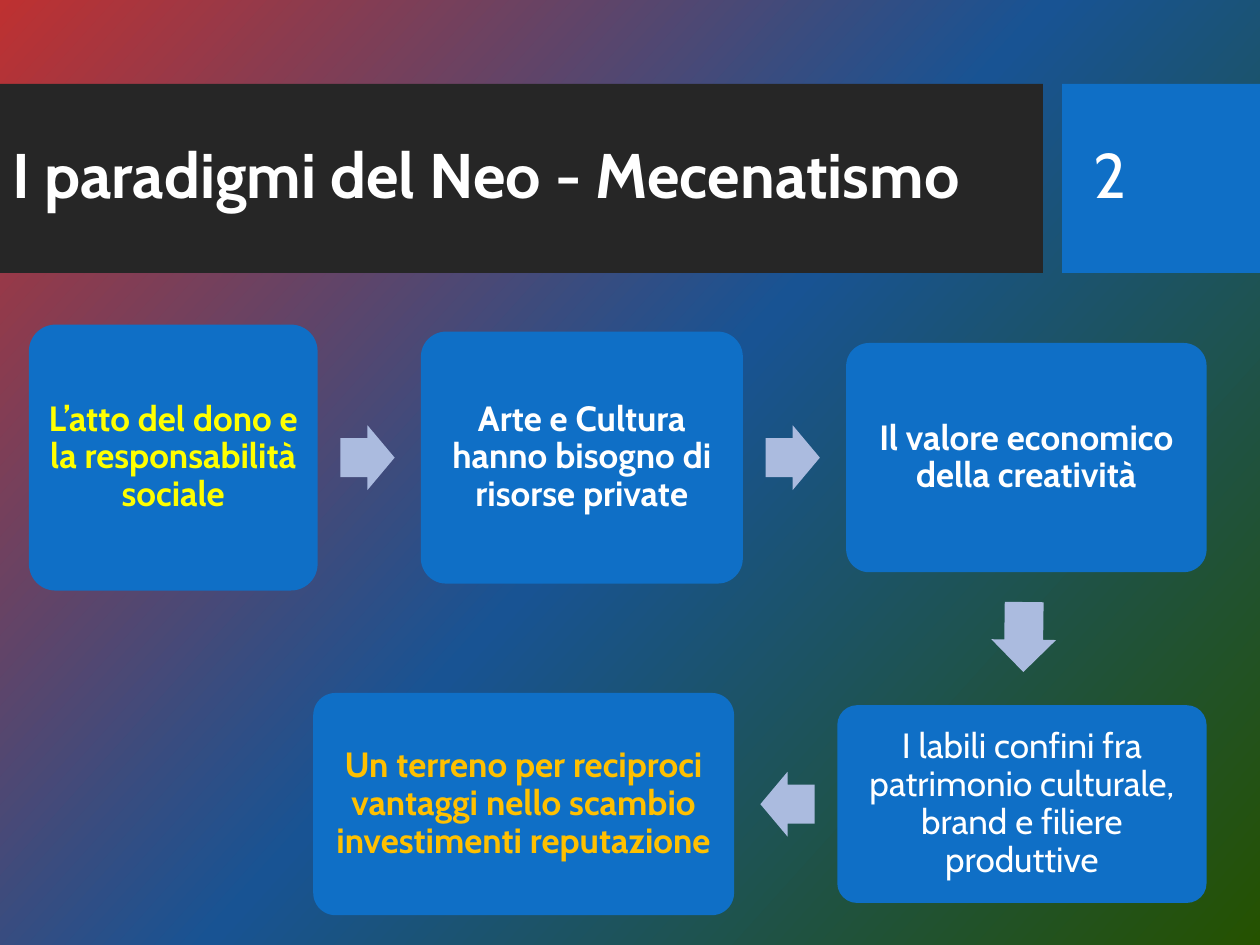
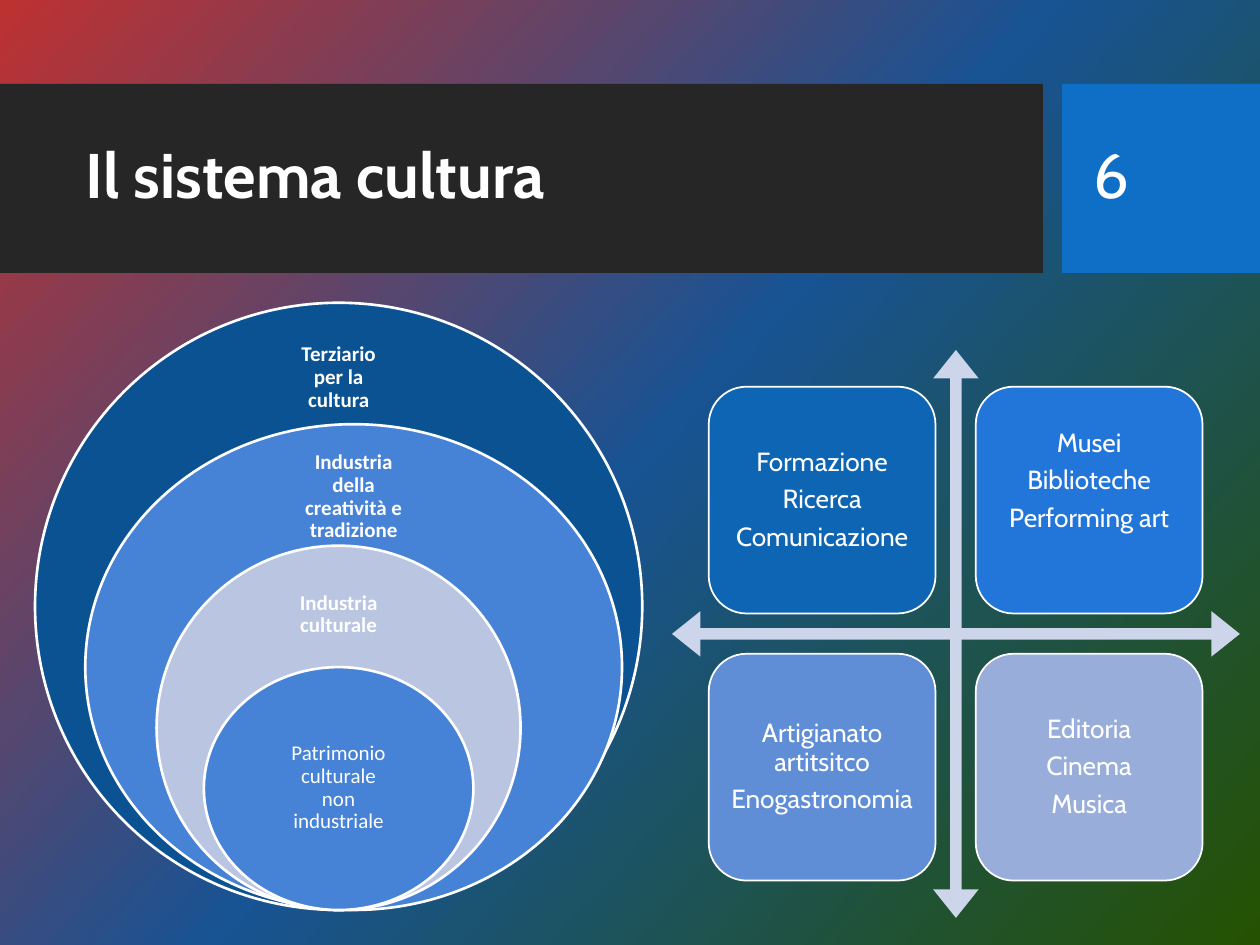
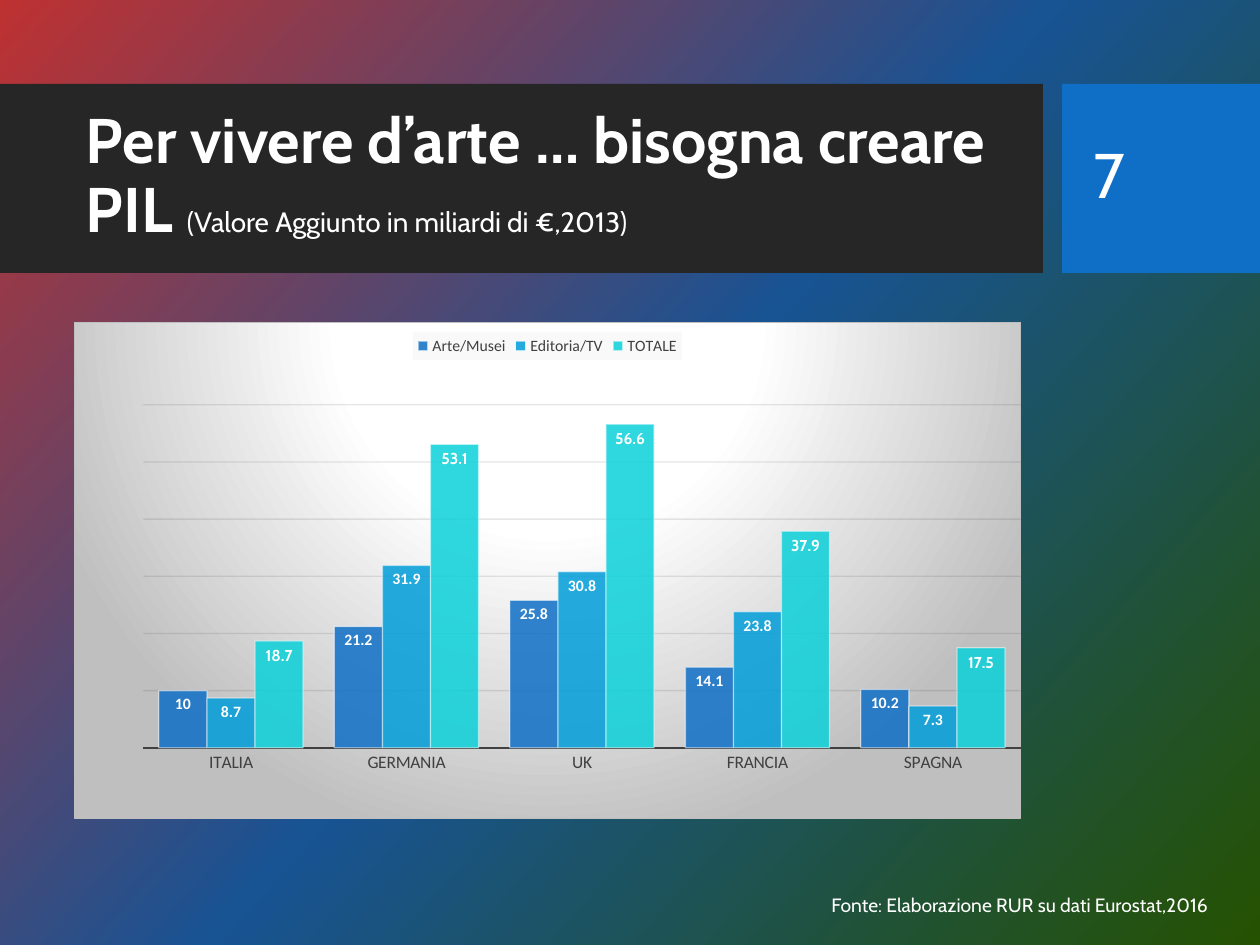
from pptx import Presentation
from pptx import util as u
from pptx.chart.data import CategoryChartData
from pptx.dml.color import RGBColor
from pptx.enum import chart as ch, shapes, text
from pptx.oxml import parse_xml
from pptx.oxml.ns import nsdecls, qn

Pt = u.Pt
SHAPE = shapes.MSO_SHAPE


class Theme:
    # Fonts and sizes
    head, body = "Cabin", "Calibri"
    title, subtitle, card, tile, ring, source = 36, 16, 20, 15, 12, 11
    axis, label = 10, 9
    # Colours
    white, dark, grey, silver = "FFFFFF", "262626", "404040", "BFBFBF"
    blue, yellow, gold, arrow, cross = "0F6FC6", "FFFF00", "FFC000", "ABBBDF", "CCD5EA"
    rings = ["0B5292", "4682D6", "B9C5E1", "4682D6"]
    tiles = ["0E65B4", "2276D9", "608ED6", "98ADD9"]
    series = [blue, "009DD9", "0BD0D9"]
    backdrop = [(0, "BE3131"), (50, "185393"), (100, "255200")]
    chart_area = [(0, white), (39, white), (100, silver)]


# ---- Shared helpers ----

def rgb(color):
    return RGBColor.from_string(color)


def grad_fill(stops, direction):
    gs = "".join(f'<a:gs pos="{pos * 1000}"><a:srgbClr val="{color}"/></a:gs>'
                 for pos, color in stops)
    return (f'<a:gradFill {nsdecls("a")} rotWithShape="1"><a:gsLst>{gs}</a:gsLst>'
            f'{direction}</a:gradFill>')


def style_font(font, size, color, bold=False, name=Theme.head):
    font.name, font.size, font.bold = name, Pt(size), bold
    font.color.rgb = rgb(color)


def write(tf, lines, size, color=Theme.white, bold=False, name=Theme.head,
          inset=None, center=False, anchor=text.MSO_ANCHOR.MIDDLE):
    tf.word_wrap = True
    tf.vertical_anchor = anchor
    if inset is not None:
        tf.margin_left = tf.margin_right = tf.margin_top = tf.margin_bottom = Pt(inset)
    tf.text = "\n".join(lines)
    for p in tf.paragraphs:
        p.line_spacing = 0.9
        if center:
            p.alignment = text.PP_ALIGN.CENTER
            p.space_after = Pt(0.35 * size)
        for r in p.runs:
            style_font(r.font, size, color, bold, name)
    return tf


def add_text(s, box, lines, size, **options):
    sp = s.shapes.add_textbox(*map(Pt, box))
    return write(sp.text_frame, lines, size, **options)


def add_block(s, kind, box, fill, line=None, adjust=(), rotation=0):
    sp = s.shapes.add_shape(kind, *map(Pt, box))
    sp.shadow.inherit = False
    sp.fill.solid()
    sp.fill.fore_color.rgb = rgb(fill)
    if line:
        sp.line.color.rgb = rgb(Theme.white)
        sp.line.width = Pt(line)
    else:
        sp.line.fill.background()
    for i, value in enumerate(adjust):
        sp.adjustments[i] = value
    sp.rotation = rotation
    return sp


def set_backdrop(master):
    master.background.fill.solid()
    solid = master.element.xpath(".//p:bgPr/a:solidFill")[0]
    lin = f'<a:lin ang="{42 * 60000}" scaled="0"/>'
    solid.getparent().replace(solid, parse_xml(grad_fill(Theme.backdrop, lin)))


def new_slide(prs, title, number, title_left=42, title_width=543):
    """Slide with the title band and the number block."""
    s = prs.slides.add_slide(prs.slide_layouts[6])
    add_block(s, SHAPE.RECTANGLE, (0, 48, 596, 108), Theme.dark)
    add_block(s, SHAPE.RECTANGLE, (607, 48, 113, 108), Theme.blue)
    tf = add_text(s, (title_left, 59, title_width, 85), [title], Theme.title, bold=True)
    add_text(s, (618, 59, 91, 86), [str(number)], Theme.title)
    return s, tf


# ---- Flow of cards ----

def flow_row(s, edge, middle, cards, direction):
    """Cards joined by arrows; direction 1 runs rightwards, -1 leftwards."""
    gap, arrow_w, arrow_h = 59, 31, 37
    for i, (w, h, label, color, bold) in enumerate(cards):
        if i:
            center = edge - direction * (gap - 28.5)
            add_block(s, SHAPE.RIGHT_ARROW,
                      (center - arrow_w / 2, middle - arrow_h / 2, arrow_w, arrow_h),
                      Theme.arrow, adjust=(0.6, 0.5), rotation=0 if direction > 0 else 180)
        left = edge if direction > 0 else edge - w
        sp = add_block(s, SHAPE.ROUNDED_RECTANGLE, (left, middle - h / 2, w, h),
                       Theme.blue, adjust=(0.1,))
        write(sp.text_frame, [label], Theme.card, color=color, bold=bold,
              inset=5.76, center=True)
        edge += direction * (w + gap)


def paradigm_flow(s, box):
    x, y, w, h = box
    flow_row(s, x, y + 76, [
        (165, 152, "L’atto del dono e la responsabilità sociale", Theme.yellow, True),
        (184, 144, "Arte e Cultura hanno bisogno di risorse private", Theme.white, True),
        (206, 131, "Il valore economico della creatività", Theme.white, True)], 1)
    add_block(s, SHAPE.RIGHT_ARROW, (x + w - 124.5, y + 160, 40, 37), Theme.arrow,
              adjust=(0.6, 0.5), rotation=90.7)
    flow_row(s, x + w, y + h - 63, [
        (211, 113, "I labili confini fra patrimonio culturale, brand e filiere produttive",
         Theme.white, False),
        (240.5, 127, "Un terreno per reciproci vantaggi nello scambio investimenti reputazione",
         Theme.gold, True)], -1)


# ---- Nested rings ----

def culture_rings(s, box):
    x, y, w, h = box
    rings = [  # width, shift from the axis, label: offset, width, height, text
        (347, 0, 24.5, 68.4, 36.7, "Terziario per la cultura"),
        (306.7, 8.6, 24, 75.6, 35.3, "Industria della creatività e tradizione"),
        (208, 0, 23, 68.4, 33, "Industria culturale"),
        (154, 0, 44.6, 77, 49, "Patrimonio culturale non industriale")]
    for i, (ring_w, shift, drop, label_w, label_h, label) in enumerate(rings):
        center = x + w / 2 + shift
        top = y + h * 0.2 * i
        add_block(s, SHAPE.OVAL, (center - ring_w / 2, top, ring_w, y + h - top),
                  Theme.rings[i], line=1.5)
        add_text(s, (center - label_w / 2, top + drop, label_w, label_h), [label],
                 Theme.ring, bold=i < len(rings) - 1, name=Theme.body,
                 inset=6.5, center=True)


# ---- Four sectors around a cross ----

def sector_matrix(s, box):
    x, y, w, h = box
    tile, pitch, offset = 129.6, 152.6, 21
    add_block(s, SHAPE.QUAD_ARROW, box, Theme.cross, adjust=(0.02, 0.04, 0.05))
    sectors = [["Formazione", "Ricerca", "Comunicazione"],
               ["Musei", "Biblioteche", "Performing art"],
               ["Artigianato artitsitco", "Enogastronomia"],
               ["Editoria", "Cinema", "Musica"]]
    for i, lines in enumerate(sectors):
        row, col = divmod(i, 2)
        sp = add_block(s, SHAPE.ROUNDED_RECTANGLE,
                       (x + offset + col * pitch, y + offset + row * pitch, tile, tile),
                       Theme.tiles[i], line=1)
        tf = write(sp.text_frame, lines, Theme.tile, inset=4.5, center=True)
        if lines[0] == "Musei":  # this group sits one line higher
            tf.margin_bottom = Pt(26)


# ---- Value added chart ----

def set_alpha(root, xpath, percent):
    for color in root.xpath(xpath):
        color.append(parse_xml(f'<a:alpha {nsdecls("a")} val="{percent * 1000}"/>'))


def chart_frame(chart):
    """Plot layout, gradient area, legend plate and transparency."""
    root = chart.element
    plot_area = root.xpath(".//c:plotArea")[0]
    for old in plot_area.findall(qn("c:layout")):
        plot_area.remove(old)
    sizes = "".join(f'<c:{k} val="{v}"/>' for k, v in
                    zip("xywh", (0.073, 0.166, 0.927, 0.692)))
    plot_area.insert(0, parse_xml(
        f'<c:layout {nsdecls("c")}><c:manualLayout><c:layoutTarget val="inner"/>'
        f'<c:xMode val="edge"/><c:yMode val="edge"/>{sizes}</c:manualLayout></c:layout>'))
    circle = ('<a:path path="circle"><a:fillToRect l="50000" t="-80000" '
              'r="50000" b="180000"/></a:path>')
    root.find(qn("c:chart")).addnext(parse_xml(
        f'<c:spPr {nsdecls("c", "a")}>{grad_fill(Theme.chart_area, circle)}'
        f'<a:ln w="9525"><a:solidFill><a:srgbClr val="{Theme.silver}"/></a:solidFill>'
        '</a:ln></c:spPr>'))
    root.xpath(".//c:legend/c:txPr")[0].addprevious(parse_xml(
        f'<c:spPr {nsdecls("c", "a")}><a:solidFill><a:srgbClr val="F2F2F2">'
        '<a:alpha val="39000"/></a:srgbClr></a:solidFill></c:spPr>'))
    set_alpha(root, ".//c:ser/c:spPr/a:solidFill/a:srgbClr", 85)
    set_alpha(root, ".//c:ser/c:spPr/a:ln/a:solidFill/a:srgbClr", 50)
    set_alpha(root, ".//c:majorGridlines//a:srgbClr", 10)


def value_chart(s, box):
    data = CategoryChartData()
    data.categories = ["ITALIA", "GERMANIA", "UK", "FRANCIA", "SPAGNA"]
    data.add_series("Arte/Musei", [10, 21.2, 25.8, 14.1, 10.2])
    data.add_series("Editoria/TV", [8.7, 31.9, 30.8, 23.8, 7.3])
    data.add_series("TOTALE", [18.7, 53.1, 56.6, 37.9, 17.5])
    chart = s.shapes.add_chart(ch.XL_CHART_TYPE.COLUMN_CLUSTERED,
                               *map(Pt, box), data).chart
    chart.has_title = False
    style_font(chart.font, Theme.axis, Theme.white)

    # Legend and axes
    chart.has_legend = True
    chart.legend.position = ch.XL_LEGEND_POSITION.TOP
    chart.legend.include_in_layout = False
    style_font(chart.legend.font, Theme.label, Theme.grey, name=Theme.body)
    cat, val = chart.category_axis, chart.value_axis
    cat.major_tick_mark = ch.XL_TICK_MARK.NONE
    style_font(cat.tick_labels.font, Theme.axis, Theme.grey, name=Theme.body)
    cat.format.line.color.rgb = rgb(Theme.grey)
    cat.format.line.width = Pt(1.5)
    val.visible = False
    val.minimum_scale, val.maximum_scale, val.major_unit = 0, 60, 10
    val.has_major_gridlines = True
    val.major_gridlines.format.line.color.rgb = rgb("0D0D0D")
    val.major_gridlines.format.line.width = Pt(0.75)

    # Columns and their labels
    plot = chart.plots[0]
    plot.gap_width, plot.overlap, plot.vary_by_categories = 65, 0, False
    label_fonts = [Theme.body, Theme.body, Theme.head]
    for ser, color, name in zip(plot.series, Theme.series, label_fonts):
        ser.format.fill.solid()
        ser.format.fill.fore_color.rgb = rgb(color)
        ser.format.line.color.rgb = rgb(Theme.white)
        ser.format.line.width = Pt(0.75)
        labels = ser.data_labels
        labels.show_value = True
        labels.position = ch.XL_LABEL_POSITION.INSIDE_END
        style_font(labels.font, Theme.label, Theme.white, True, name)
    chart_frame(chart)


def main():
    prs = Presentation()
    prs.slide_width, prs.slide_height = Pt(720), Pt(540)
    set_backdrop(prs.slide_master)

    s, _ = new_slide(prs, "I paradigmi del Neo - Mecenatismo", 2, 0, 607)
    paradigm_flow(s, (16.5, 185.5, 673, 337))

    s, _ = new_slide(prs, "Il sistema cultura", 6)
    culture_rings(s, (20, 173, 347, 347))
    sector_matrix(s, (384, 200, 324.5, 324.5))

    s, tf = new_slide(prs, "Per vivere d’arte … bisogna creare PIL ", 7)
    r = tf.paragraphs[0].add_run()
    r.text = "(Valore Aggiunto in miliardi di €,2013)"
    style_font(r.font, Theme.subtitle, Theme.white)
    value_chart(s, (42, 184, 542, 284))
    tf = add_text(s, (468, 507, 246, 21), ["Fonte: Elaborazione RUR su dati Eurostat,2016"],
                  Theme.source, anchor=text.MSO_ANCHOR.TOP)
    tf.word_wrap = False
    tf.paragraphs[0].line_spacing = 1.0

    prs.save("out.pptx")


if __name__ == "__main__":
    main()
